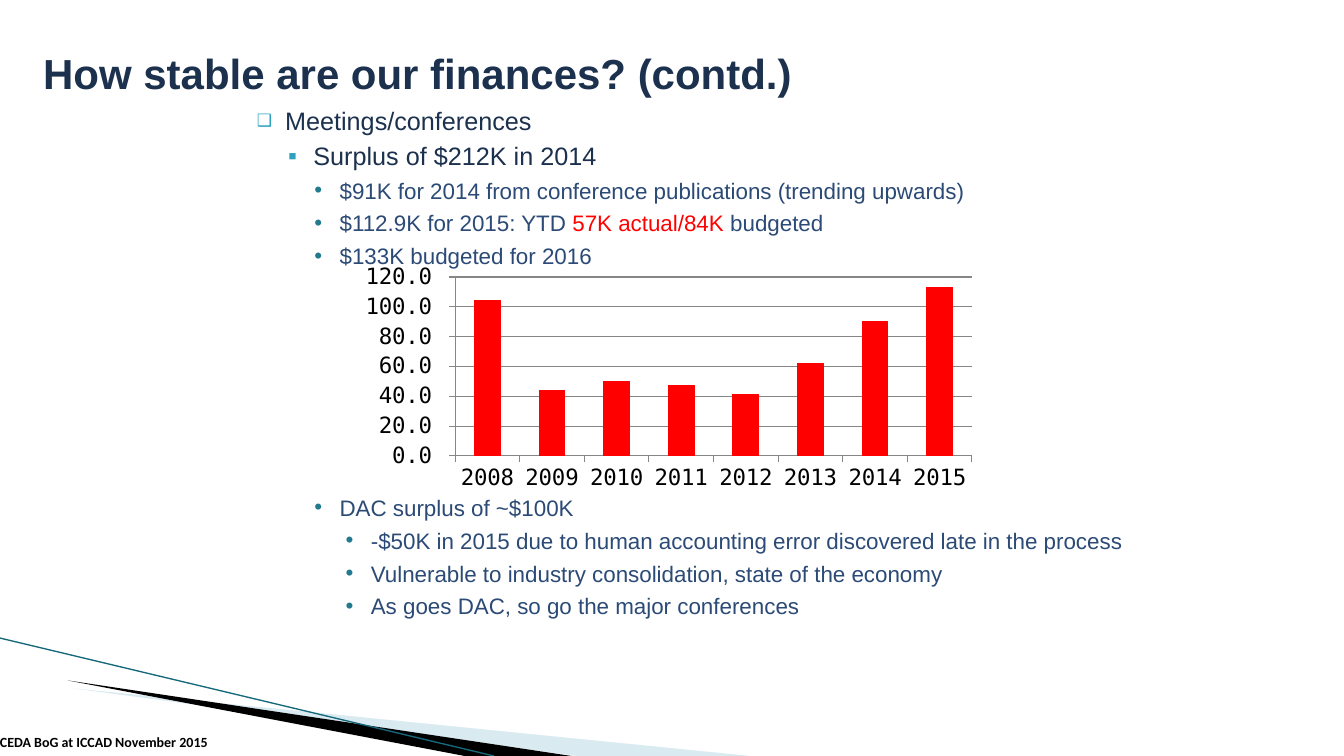
from lxml import etree
from pptx import Presentation
from pptx.chart.data import CategoryChartData
from pptx.dml.color import RGBColor
from pptx.enum.chart import XL_CHART_TYPE, XL_TICK_MARK
from pptx.enum.shapes import MSO_CONNECTOR
from pptx.enum.text import MSO_ANCHOR
from pptx.oxml import parse_xml
from pptx.oxml.ns import nsdecls, qn
from pptx.util import Inches, Pt

COLUMN = XL_CHART_TYPE.COLUMN_CLUSTERED
TICK_OUTSIDE = XL_TICK_MARK.OUTSIDE
STRAIGHT = MSO_CONNECTOR.STRAIGHT
TOP, MIDDLE, BOTTOM = MSO_ANCHOR.TOP, MSO_ANCHOR.MIDDLE, MSO_ANCHOR.BOTTOM

NAVY = RGBColor(0x1C, 0x31, 0x4E)
SLATE = RGBColor(0x2B, 0x4A, 0x76)
RED = RGBColor(0xFF, 0x00, 0x00)
BLACK = RGBColor(0x00, 0x00, 0x00)
GRAY = RGBColor(0x86, 0x86, 0x86)
PALE_BLUE = RGBColor(0xA0, 0xCB, 0xDC)
TEAL = RGBColor(0x16, 0x69, 0x7A)
BULLET_CYAN = RGBColor(0x2D, 0xA2, 0xBF)
BULLET_TEAL = RGBColor(0x22, 0x7A, 0x8F)

TITLE = "How stable are our finances? (contd.)"
FOOTER = "CEDA BoG at ICCAD November 2015"

LEVELS = [
    dict(margin=0.4, hanging=0.28, before=4, bullet="❑", bullet_color=BULLET_CYAN,
         bullet_size=68, size=18, color=NAVY),
    dict(margin=0.68, hanging=0.25, before=3.2, bullet="▪", bullet_color=BULLET_CYAN,
         bullet_size=100, size=18, color=NAVY),
    dict(margin=0.94, hanging=0.25, before=4.3, bullet="•", bullet_color=BULLET_TEAL,
         bullet_size=100, size=16, color=SLATE),
    dict(margin=1.25, hanging=0.25, before=4.3, bullet="•", bullet_color=BULLET_TEAL,
         bullet_size=100, size=16, color=SLATE),
]
OUTLINES = [
    ((2.33, 1, 8.92, 1.7), [
        (0, [("Meetings/conferences", None)]),
        (1, [("Surplus of $212K in 2014", None)]),
        (2, [("$91K for 2014 from conference publications (trending upwards)", None)]),
        (2, [("$112.9K for 2015: YTD ", None), ("57K actual/84K ", RED), ("budgeted", None)]),
        (2, [("$133K budgeted for 2016", None)]),
    ]),
    ((2.33, 4.85, 8.92, 1.35), [
        (2, [("DAC surplus of ~$100K", None)]),
        (3, [("-$50K in 2015 due to human accounting error discovered late in the process", None)]),
        (3, [("Vulnerable to industry consolidation, state of the economy", None)]),
        (3, [("As goes DAC, so go the major conferences", None)]),
    ]),
]

YEARS = ["2008", "2009", "2010", "2011", "2012", "2013", "2014", "2015"]
SURPLUS = [104, 44, 50, 47, 41, 62, 90, 113]
PLOT_AREA = {"x": 0.162, "y": 0.072, "w": 0.819, "h": 0.759}

SWOOSHES = [
    ([(0.73, 6.83), (7.44, 7.5), (5.72, 7.5)], PALE_BLUE, 40),
    ([(0.67, 6.75), (5.67, 7.5), (4.61, 7.5)], BLACK, 100),
]


def add_swoosh(slide, points, color, opacity):
    corners = [(Inches(x), Inches(y)) for x, y in points]
    builder = slide.shapes.build_freeform(*corners[0], scale=1.0)
    builder.add_line_segments(corners[1:], close=True)
    shape = builder.convert_to_shape()
    shape.shadow.inherit = False
    shape.fill.solid()
    shape.fill.fore_color.rgb = color
    shape.line.fill.background()
    if opacity < 100:
        color_element = shape.fill._xPr.find(".//" + qn("a:srgbClr"))
        etree.SubElement(color_element, qn("a:alpha"), val=str(opacity * 1000))


def add_text_box(slide, box, anchor):
    frame = slide.shapes.add_textbox(*map(Inches, box)).text_frame
    frame.word_wrap = True
    frame.vertical_anchor = anchor
    return frame


def add_run(paragraph, text, font_name, size, color, bold=False):
    run = paragraph.add_run()
    run.text = text
    run.font.name = font_name
    run.font.size = Pt(size)
    run.font.color.rgb = color
    run.font.bold = bold


def set_bullet(paragraph, level):
    properties = paragraph._p.get_or_add_pPr()
    properties.set("marL", str(Inches(level["margin"])))
    properties.set("indent", str(-Inches(level["hanging"])))
    color = etree.SubElement(properties, qn("a:buClr"))
    etree.SubElement(color, qn("a:srgbClr"), val=str(level["bullet_color"]))
    etree.SubElement(properties, qn("a:buSzPct"), val=str(level["bullet_size"] * 1000))
    etree.SubElement(properties, qn("a:buFont"), typeface="Arial")
    etree.SubElement(properties, qn("a:buChar"), char=level["bullet"])


def add_outline(slide, box, items):
    frame = add_text_box(slide, box, TOP)
    for index, (depth, runs) in enumerate(items):
        level = LEVELS[depth]
        paragraph = frame.add_paragraph() if index else frame.paragraphs[0]
        paragraph.level = depth
        set_bullet(paragraph, level)
        paragraph.space_before = Pt(level["before"] if index else 0)
        for text, color in runs:
            add_run(paragraph, text, "Arial", level["size"], color or level["color"])


def add_surplus_chart(slide):
    data = CategoryChartData()
    data.categories = YEARS
    data.add_series("Series 1", SURPLUS)
    box = map(Inches, (3.5, 2.58, 6.26, 2.34))
    chart = slide.shapes.add_chart(COLUMN, *box, data).chart
    chart.has_legend = False
    chart.has_title = False
    chart.font.name = "DejaVu Sans Mono"
    chart.font.size = Pt(10)
    chart.font.color.rgb = BLACK

    plot = chart.plots[0]
    plot.gap_width = 150
    plot.vary_by_categories = False
    series_format = plot.series[0].format
    series_format.fill.solid()
    series_format.fill.fore_color.rgb = RED
    series_format.line.color.rgb = RED
    series_format.line.width = Pt(0.75)

    values = chart.value_axis
    for axis in (chart.category_axis, values):
        axis.major_tick_mark = TICK_OUTSIDE
        axis.tick_labels.font.size = Pt(16)
        axis.format.line.color.rgb = GRAY
    values.minimum_scale, values.maximum_scale, values.major_unit = 0, 120, 20
    values.tick_labels.number_format = "0.0_);\\(0.0\\)"
    values.tick_labels.number_format_is_linked = False
    values.has_major_gridlines = True
    values.major_gridlines.format.line.color.rgb = GRAY

    plot_area = chart._chartSpace.find(".//" + qn("c:plotArea"))
    for layout in plot_area.findall(qn("c:layout")):
        plot_area.remove(layout)
    sizes = "".join(f'<c:{key} val="{value}"/>' for key, value in PLOT_AREA.items())
    plot_area.insert(0, parse_xml(
        f'<c:layout {nsdecls("c")}><c:manualLayout><c:layoutTarget val="inner"/>'
        f'<c:xMode val="edge"/><c:yMode val="edge"/>{sizes}</c:manualLayout></c:layout>'))


def main():
    presentation = Presentation()
    presentation.slide_width = Inches(13.33)
    presentation.slide_height = Inches(7.5)
    slide = presentation.slides.add_slide(presentation.slide_layouts[6])

    for points, color, opacity in SWOOSHES:
        add_swoosh(slide, points, color, opacity)
    ends = map(Inches, (0, 6.33, 4.9, 7.5))
    connector = slide.shapes.add_connector(STRAIGHT, *ends)
    connector.line.color.rgb = TEAL
    connector.line.width = Pt(0.95)
    etree.SubElement(connector._element.spPr, qn("a:effectLst"))

    title = add_text_box(slide, (0.33, 0.25, 10.33, 0.95), MIDDLE)
    add_run(title.paragraphs[0], TITLE, "Arial", 30, NAVY, bold=True)
    for box, items in OUTLINES:
        add_outline(slide, box, items)
    add_surplus_chart(slide)
    footer = add_text_box(slide, (0, 7.25, 3.34, 0.24), BOTTOM)
    footer.margin_left = 0
    add_run(footer.paragraphs[0], FOOTER, "Calibri", 10, BLACK, bold=True)

    presentation.save("out.pptx")


if __name__ == "__main__":
    main()
